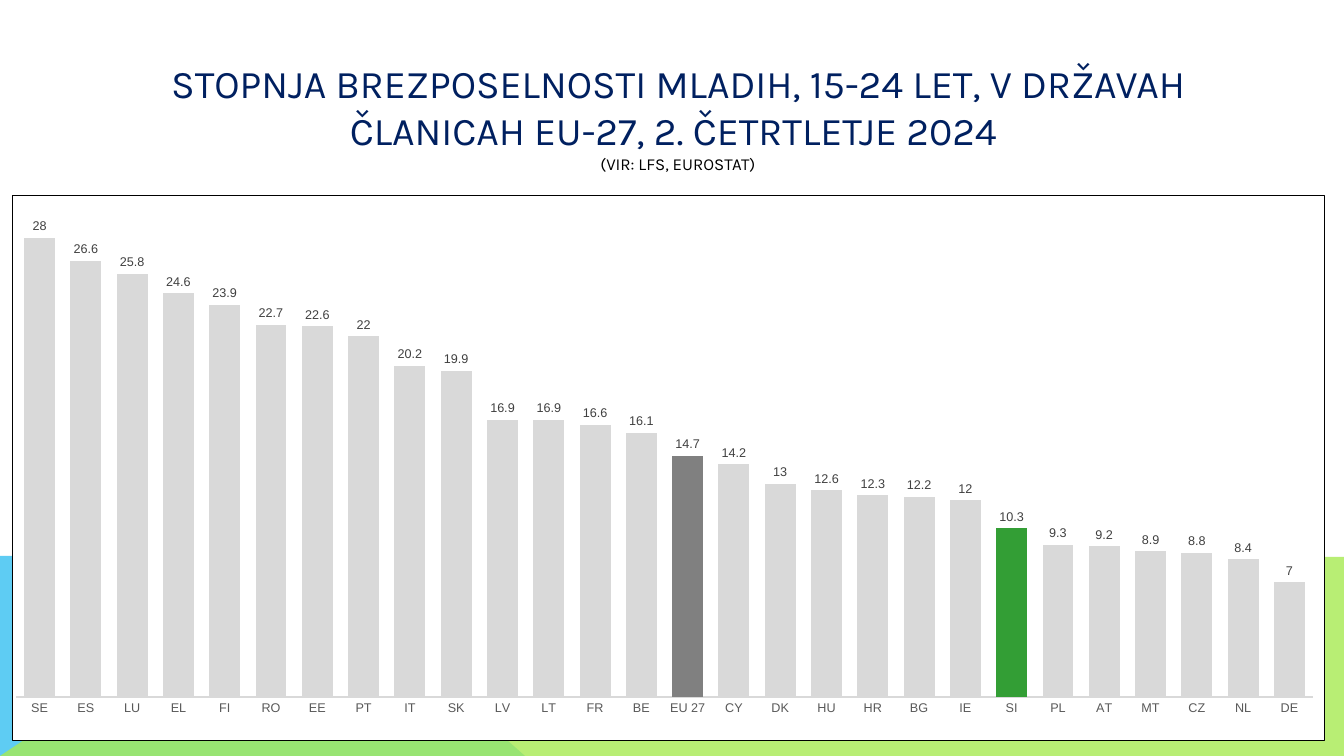
from lxml import etree
from pptx import Presentation, util as u
from pptx.chart.data import CategoryChartData
from pptx.dml.color import RGBColor
from pptx.enum import chart as ch, text
from pptx.oxml import parse_xml
from pptx.oxml.ns import qn

PX = 914400 / 100.8
COLORS = {"navy": "002060", "black": "000000", "white": "FFFFFF", "sky": "5ECCF3",
          "lime": "A7EA52", "bar": "D9D9D9", "average": "808080", "slovenia": "339E35",
          "axis": "595959", "label": "404040"}
RATES = {"SE": 28, "ES": 26.6, "LU": 25.8, "EL": 24.6, "FI": 23.9, "RO": 22.7, "EE": 22.6,
         "PT": 22, "IT": 20.2, "SK": 19.9, "LV": 16.9, "LT": 16.9, "FR": 16.6, "BE": 16.1,
         "EU 27": 14.7, "CY": 14.2, "DK": 13, "HU": 12.6, "HR": 12.3, "BG": 12.2, "IE": 12,
         "SI": 10.3, "PL": 9.3, "AT": 9.2, "MT": 8.9, "CZ": 8.8, "NL": 8.4, "DE": 7}
HIGHLIGHTS = {"EU 27": "average", "SI": "slovenia"}


def px(*lengths):
    return [u.Emu(round(length * PX)) for length in lengths]


def style_font(font, name, size, color):
    for key, value in {"name": name, "size": u.Pt(size), "bold": False}.items():
        setattr(font, key, value)
    font.color.rgb = RGBColor.from_string(COLORS[color])


deck = Presentation()
deck.slide_width, deck.slide_height = px(1344, 756)
page = deck.slides.add_slide(deck.slide_layouts[5])

# Coloured bands along the bottom
bands = [("sky", 100, [(0, 756), (0, 556), (300, 556), (525, 756)]),
         ("lime", 80, [(0, 756), (300, 556), (1344, 557), (1344, 756)])]
for color, opacity, points in bands:
    outline = page.shapes.build_freeform(*points[0], scale=PX)
    outline.add_line_segments(points[1:], close=True)
    band = outline.convert_to_shape()
    band.shadow.inherit = False
    band.line.fill.background()
    band.fill.solid()
    band.fill.fore_color.rgb = RGBColor.from_string(COLORS[color])
    if opacity < 100:
        tint = band.element.spPr.find(qn("a:solidFill"))[0]
        etree.SubElement(tint, qn("a:alpha"), val=str(opacity * 1000))

# Title
title = page.shapes.title
title.left, title.top, title.width, title.height = px(152, 38, 1052, 157)
frame = title.text_frame
for key, value in {"word_wrap": True, "auto_size": text.MSO_AUTO_SIZE.NONE,
                   "vertical_anchor": text.MSO_ANCHOR.MIDDLE}.items():
    setattr(frame, key, value)
para = frame.paragraphs[0]
para.alignment = text.PP_ALIGN.CENTER
heading = para.add_run()
heading.text = "STOPNJA BREZPOSELNOSTI MLADIH, 15-24 LET, V DRŽAVAH ČLANICAH EU-27, 2. ČETRTLETJE 2024 "
style_font(heading.font, "Karla", 28, "navy")
para.add_line_break()
source = para.add_run()
source.text = "(VIR: LFS, EUROSTAT)"
style_font(source.font, "Karla", 12, "black")

# Chart
data = CategoryChartData()
data.categories = list(RATES)
data.add_series("Series 1", list(RATES.values()))
chart = page.shapes.add_chart(ch.XL_CHART_TYPE.COLUMN_CLUSTERED,
                              *px(12, 195, 1313, 546), data).chart
chart.has_legend = chart.has_title = False
style_font(chart.font, "Arial", 10, "black")

countries, rates = chart.category_axis, chart.value_axis
for axis in (countries, rates):
    axis.has_major_gridlines = False
    axis.major_tick_mark = axis.minor_tick_mark = ch.XL_TICK_MARK.NONE
    style_font(axis.tick_labels.font, "Arial", 9, "axis")
countries.format.line.width = u.Pt(1.5)
countries.format.line.color.rgb = RGBColor.from_string(COLORS["bar"])
rates.minimum_scale, rates.maximum_scale = 0, 30
rates.tick_label_position = ch.XL_TICK_LABEL_POSITION.NONE
rates.format.line.fill.background()

plot = chart.plots[0]
for key, value in {"gap_width": 50, "overlap": -27, "vary_by_categories": False,
                   "has_data_labels": True}.items():
    setattr(plot, key, value)
labels = plot.data_labels
for key, value in {"show_value": True, "number_format": "General",
                   "number_format_is_linked": False,
                   "position": ch.XL_LABEL_POSITION.OUTSIDE_END}.items():
    setattr(labels, key, value)
style_font(labels.font, "Arial", 9, "label")

series = plot.series[0]
fills = [(series, "bar")]
fills += [(series.points[list(RATES).index(name)], color) for name, color in HIGHLIGHTS.items()]
for bars, color in fills:
    bars.format.fill.solid()
    bars.format.fill.fore_color.rgb = RGBColor.from_string(COLORS[color])

# Fixed plot area, white background and thin black frame
NS = ('xmlns:c="http://schemas.openxmlformats.org/drawingml/2006/chart" '
      'xmlns:a="http://schemas.openxmlformats.org/drawingml/2006/main"')
chart_root = chart.element.find(qn("c:chart"))
plot_area = chart_root.find(qn("c:plotArea"))
for layout in plot_area.findall(qn("c:layout")):
    plot_area.remove(layout)
settings = {"layoutTarget": "inner", "xMode": "edge", "yMode": "edge",
            "x": 0.003, "y": 0.017, "w": 0.988, "h": 0.904}
rules = "".join(f'<c:{key} val="{value}"/>' for key, value in settings.items())
plot_area.insert(0, parse_xml(
    f"<c:layout {NS}><c:manualLayout>{rules}</c:manualLayout></c:layout>"))
chart_root.addnext(parse_xml(
    f'<c:spPr {NS}><a:solidFill><a:srgbClr val="{COLORS["white"]}"/></a:solidFill>'
    f'<a:ln w="{u.Pt(0.75)}"><a:solidFill><a:srgbClr val="{COLORS["black"]}"/></a:solidFill>'
    "</a:ln></c:spPr>"))

deck.save("out.pptx")
